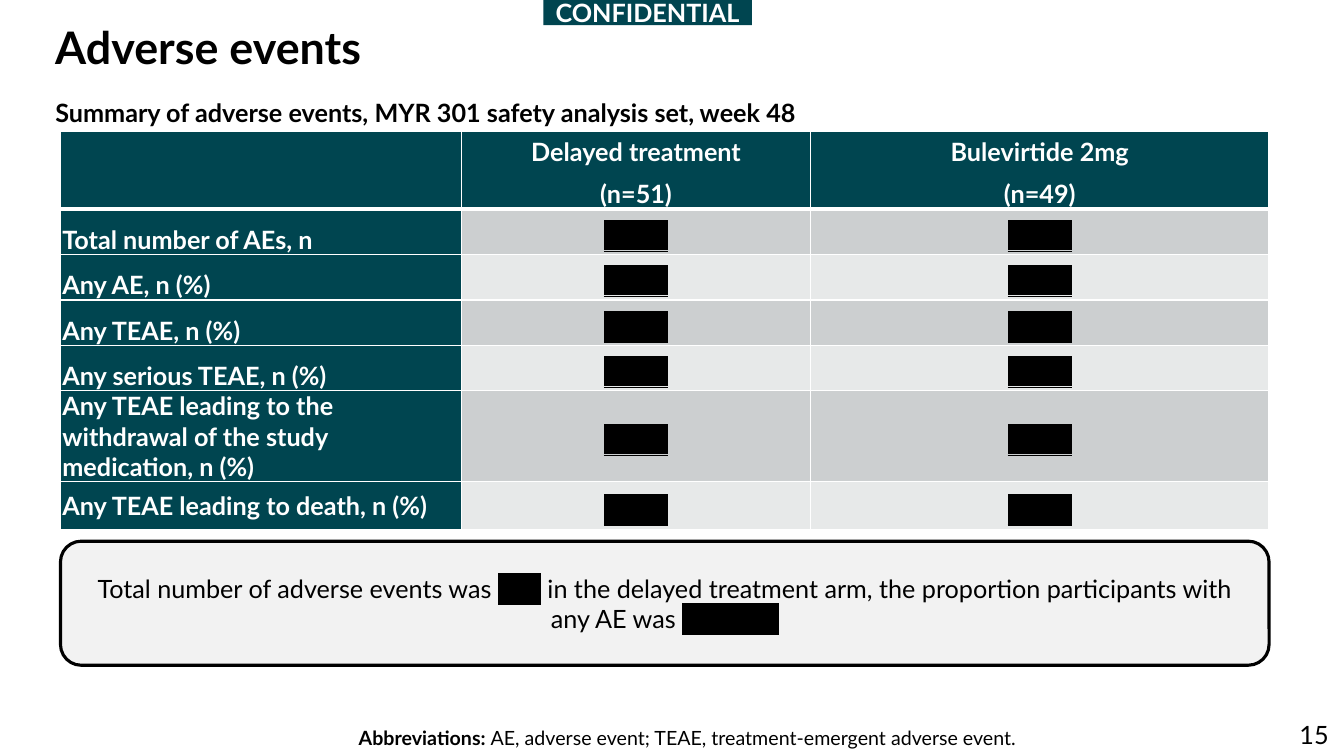
from lxml import etree
from pptx import Presentation
from pptx.dml.color import RGBColor
from pptx.enum import shapes, text
from pptx.oxml import ns
from pptx.util import Pt

BLACK = RGBColor(0x00, 0x00, 0x00)
WHITE = RGBColor(0xFF, 0xFF, 0xFF)
TEAL = RGBColor(0x00, 0x45, 0x50)
BANDS = [RGBColor(0xCC, 0xCF, 0xD0), RGBColor(0xE7, 0xE9, 0xE9)]
PALE = RGBColor(0xF2, 0xF2, 0xF2)
LEFT, CENTER, RIGHT = text.PP_ALIGN.LEFT, text.PP_ALIGN.CENTER, text.PP_ALIGN.RIGHT
MIDDLE = text.MSO_ANCHOR.MIDDLE

HEADERS = [[], ["Delayed treatment", "(n=51)"], ["Bulevirtide 2mg", "(n=49)"]]
# Row label, line spacing, row height
ROWS = [
    ("Total number of AEs, n", 1.5, 32.4),
    ("Any AE, n (%)", 1.5, 32.4),
    ("Any TEAE, n (%)", 1.5, 32.4),
    ("Any serious TEAE, n (%)", 1.5, 32.4),
    ("Any TEAE leading to the withdrawal of the study medication, n (%)", 1, 64.8),
    ("Any TEAE leading to death, n (%)", 1, 34.6),
]
COL_WIDTHS = [286.6, 249.1, 327.6]
HEADER_HEIGHT = 55.8


def sub(parent, tag, **attrs):
    return etree.SubElement(parent, ns.qn(tag), attrs)


def style(p, size=18, color=BLACK, bold=False, align=LEFT, spacing=None):
    p.alignment = align
    if spacing:
        p.line_spacing = spacing
    f = p.font
    f.name, f.size, f.bold = "Lato", Pt(size), bold
    f.color.rgb = color


def add_run(p, words):
    r = p.add_run()
    r.text = words
    return r


def redact(p, count):
    """Add asterisks hidden behind a black highlight."""
    r = add_run(p, "*" * count)
    r.font.underline = True
    r.font.color.rgb = BLACK
    highlight = etree.Element(ns.qn("a:highlight"))
    sub(highlight, "a:srgbClr", val=str(BLACK))
    r.font.fill  # the highlight must follow the fill
    r._r.rPr.find(ns.qn("a:solidFill")).addnext(highlight)


def add_text(s, words, x, y, w, h, wrap=True, **look):
    tf = s.shapes.add_textbox(Pt(x), Pt(y), Pt(w), Pt(h)).text_frame
    tf.word_wrap = wrap
    p = tf.paragraphs[0]
    style(p, **look)
    add_run(p, words)
    return p


def add_panel(s, kind, x, y, w, h, fill, **look):
    sp = s.shapes.add_shape(kind, Pt(x), Pt(y), Pt(w), Pt(h))
    sp.shadow.inherit = False
    sp.fill.solid()
    sp.fill.fore_color.rgb = fill
    sp.line.fill.background()
    tf = sp.text_frame
    tf.word_wrap = True
    tf.vertical_anchor = MIDDLE
    p = tf.paragraphs[0]
    style(p, align=CENTER, **look)
    return sp, p


def format_cell(cell, fill, bottom=1):
    cell.margin_left = cell.margin_right = Pt(1.4)
    cell.margin_top = cell.margin_bottom = 0
    cell.vertical_anchor = MIDDLE
    tcPr = cell._tc.get_or_add_tcPr()
    for side, width in (("L", 1), ("R", 1), ("T", 1), ("B", bottom)):
        ln = sub(tcPr, "a:ln" + side, w=str(Pt(width)))
        sub(sub(ln, "a:solidFill"), "a:srgbClr", val=str(WHITE))
    cell.fill.solid()
    cell.fill.fore_color.rgb = fill


def add_events_table(s, x, y):
    heights = [HEADER_HEIGHT] + [row[2] for row in ROWS]
    table = s.shapes.add_table(len(heights), len(COL_WIDTHS), Pt(x), Pt(y),
                               Pt(sum(COL_WIDTHS)), Pt(sum(heights))).table
    table.first_row = table.horz_banding = False
    for column, width in zip(table.columns, COL_WIDTHS):
        column.width = Pt(width)
    for row, height in zip(table.rows, heights):
        row.height = Pt(height)

    # Header row
    for c, lines in enumerate(HEADERS):
        cell = table.cell(0, c)
        format_cell(cell, TEAL, bottom=3)
        tf = cell.text_frame
        for i, line in enumerate(lines):
            p = tf.add_paragraph() if i else tf.paragraphs[0]
            style(p, color=WHITE, bold=True, align=CENTER, spacing=1.2)
            p.space_before, p.space_after = Pt(2 if i else 0), Pt(2)
            add_run(p, line)

    # Row labels and redacted values
    for i, (label, spacing, _) in enumerate(ROWS):
        cell = table.cell(i + 1, 0)
        format_cell(cell, TEAL)
        p = cell.text_frame.paragraphs[0]
        style(p, color=WHITE, bold=True, spacing=spacing)
        add_run(p, label)
        for c in (1, 2):
            cell = table.cell(i + 1, c)
            format_cell(cell, BANDS[i % 2])
            p = cell.text_frame.paragraphs[0]
            style(p, align=CENTER, spacing=1.2)
            redact(p, 6)


def main():
    prs = Presentation()
    prs.slide_width, prs.slide_height = Pt(960), Pt(540)
    s = prs.slides.add_slide(prs.slide_layouts[6])

    # Page number, title and footnote
    add_text(s, "15", 823.7, 510.5, 132.5, 28.8, align=RIGHT)
    add_text(s, "Adverse events", 32.4, 15.1, 895.7, 41, size=32, bold=True, spacing=0.9)
    p = add_text(s, "Abbreviations: ", 249.1, 514.8, 504.7, 24.5, wrap=False, size=14)
    p.runs[0].font.bold = True
    add_run(p, "AE, adverse event; TEAE, treatment-emergent adverse event.")

    # Table with its caption
    add_events_table(s, 43.2, 93.6)
    add_text(s, "Summary of adverse events, MYR 301 safety analysis set, week 48",
             32.4, 66.2, 894.2, 28.8, bold=True)

    # Key message
    sp, p = add_panel(s, shapes.MSO_SHAPE.ROUNDED_RECTANGLE, 43.2, 386.6, 863.3, 88.6, PALE)
    sp.line.color.rgb = BLACK
    sp.line.width = Pt(2.25)
    add_run(p, "Total number of adverse events was ")
    redact(p, 4)
    add_run(p, " in the delayed treatment arm, the proportion participants with any AE was ")
    redact(p, 9)

    # Confidentiality label
    _, p = add_panel(s, shapes.MSO_SHAPE.RECTANGLE, 388.1, 0, 149, 18, TEAL,
                     color=WHITE, bold=True)
    add_run(p, "CONFIDENTIAL")

    prs.save("out.pptx")


if __name__ == "__main__":
    main()
